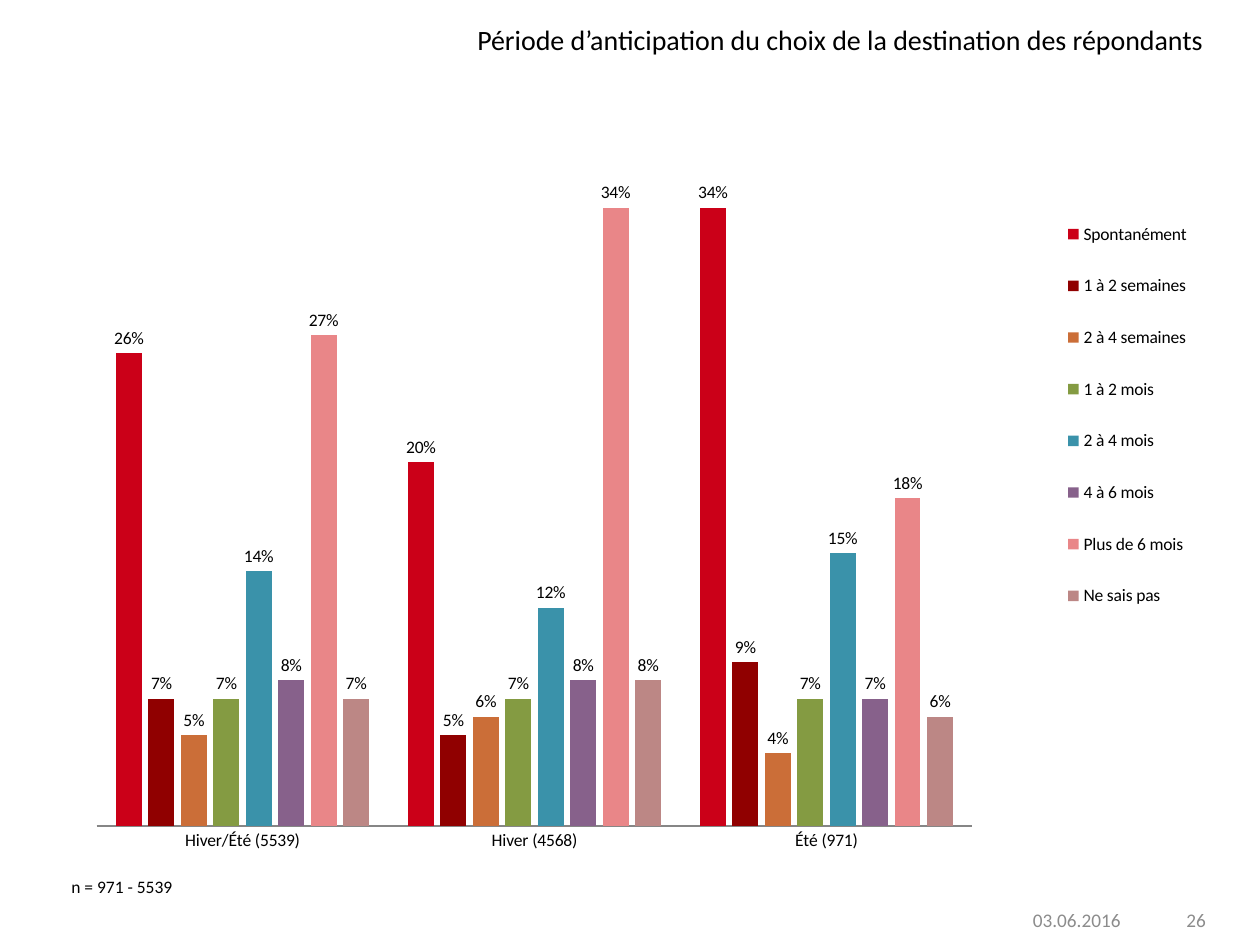
from dataclasses import dataclass

from lxml.etree import SubElement
from pptx import Presentation
from pptx.chart.chart import Chart
from pptx.chart.data import CategoryChartData
from pptx.dml.color import RGBColor
from pptx.enum.chart import XL_CHART_TYPE, XL_LABEL_POSITION, XL_LEGEND_POSITION, XL_TICK_MARK
from pptx.enum.text import MSO_ANCHOR, PP_ALIGN
from pptx.oxml.ns import qn
from pptx.slide import Slide
from pptx.util import Cm, Pt

FONT = "Calibri"
COLORS = {
    "text": "000000",
    "footer": "8C8C8C",
    "axis": "868686",
    "red": "CB0018",
    "dark red": "900000",
    "orange": "CB6E38",
    "green": "849B42",
    "blue": "3A92AA",
    "purple": "87618B",
    "pink": "E98688",
    "dusty rose": "BC8785",
}


@dataclass
class Label:
    text: str
    left: float
    top: float
    width: float
    height: float
    size: int
    color: str = "text"
    align: PP_ALIGN = PP_ALIGN.LEFT
    anchor: MSO_ANCHOR = MSO_ANCHOR.TOP


@dataclass
class Period:
    name: str
    shares: tuple[float, ...]
    color: str


LABELS = [
    Label("03.06.2016", 20.57, 18.03, 2.54, 1.02, 11, "footer", anchor=MSO_ANCHOR.MIDDLE),
    Label("26", 18.64, 18.03, 5.92, 1.02, 11, "footer", PP_ALIGN.RIGHT, MSO_ANCHOR.MIDDLE),
    Label("Période d’anticipation du choix de la destination des répondants",
          7.62, 0.33, 16.89, 0.94, 16, align=PP_ALIGN.RIGHT),
    Label("n = 971 - 5539", 1.19, 17.53, 3.53, 0.69, 10),
]

SEASONS = ["Hiver/Été (5539)", "Hiver (4568)", "Été (971)"]
PERIODS = [
    Period("Spontanément", (0.26, 0.20, 0.34), "red"),
    Period("1 à 2 semaines", (0.07, 0.05, 0.09), "dark red"),
    Period("2 à 4 semaines", (0.05, 0.06, 0.04), "orange"),
    Period("1 à 2 mois", (0.07, 0.07, 0.07), "green"),
    Period("2 à 4 mois", (0.14, 0.12, 0.15), "blue"),
    Period("4 à 6 mois", (0.08, 0.08, 0.07), "purple"),
    Period("Plus de 6 mois", (0.27, 0.34, 0.18), "pink"),
    Period("Ne sais pas", (0.07, 0.08, 0.06), "dusty rose"),
]


def rgb(name: str) -> RGBColor:
    return RGBColor.from_string(COLORS[name])


def add_label(page: Slide, label: Label) -> None:
    box = page.shapes.add_textbox(
        Cm(label.left), Cm(label.top), Cm(label.width), Cm(label.height))
    frame = box.text_frame
    frame.word_wrap = True
    frame.vertical_anchor = label.anchor
    paragraph = frame.paragraphs[0]
    paragraph.text = label.text
    paragraph.alignment = label.align
    paragraph.font.name = FONT
    paragraph.font.size = Pt(label.size)
    paragraph.font.color.rgb = rgb(label.color)


def place_part(chart: Chart, tag: str, index: int, inner: bool,
               bounds: tuple[float, float, float, float]) -> None:
    """Give a chart part a manual layout in fractions of the chart area."""
    part = chart.element.find(f".//{qn(tag)}")
    for old_layout in part.findall(qn("c:layout")):
        part.remove(old_layout)
    layout = SubElement(part, qn("c:layout"))
    part.insert(index, layout)
    manual = SubElement(layout, qn("c:manualLayout"))
    settings = [("layoutTarget", "inner")] if inner else []
    settings += [("xMode", "edge"), ("yMode", "edge")]
    settings += zip("xywh", map(str, bounds))
    for name, value in settings:
        SubElement(manual, qn(f"c:{name}")).set("val", value)


def add_period_chart(page: Slide) -> None:
    data = CategoryChartData(number_format="0%")
    data.categories = SEASONS
    for period in PERIODS:
        data.add_series(period.name, period.shares)
    chart = page.shapes.add_chart(
        XL_CHART_TYPE.COLUMN_CLUSTERED, Cm(1.19), Cm(1.47), Cm(23.67), Cm(16.05), data).chart
    chart.has_title = False
    chart.font.name = FONT
    chart.font.size = Pt(10)
    chart.font.color.rgb = rgb("text")

    seasons_axis = chart.category_axis
    seasons_axis.major_tick_mark = XL_TICK_MARK.NONE
    seasons_axis.format.line.color.rgb = rgb("axis")
    seasons_axis.format.line.width = Pt(0.75)
    shares_axis = chart.value_axis
    shares_axis.minimum_scale, shares_axis.maximum_scale = 0, 0.4
    shares_axis.has_major_gridlines = False
    shares_axis.visible = False

    plot = chart.plots[0]
    plot.gap_width, plot.overlap = 150, -25
    plot.vary_by_categories = False
    for series, period in zip(plot.series, PERIODS):
        series.format.fill.solid()
        series.format.fill.fore_color.rgb = rgb(period.color)
        labels = series.data_labels
        labels.show_value = True
        labels.number_format = "0%"
        labels.number_format_is_linked = False
        labels.position = XL_LABEL_POSITION.OUTSIDE_END

    chart.has_legend = True
    chart.legend.position = XL_LEGEND_POSITION.RIGHT
    chart.legend.include_in_layout = False
    place_part(chart, "c:plotArea", 0, True, (0.032, 0.032, 0.746, 0.914))
    place_part(chart, "c:legend", 1, False, (0.84, 0.15, 0.14, 0.56))


def main() -> None:
    deck = Presentation()
    deck.slide_width, deck.slide_height = Cm(25.4), Cm(19.05)
    page = deck.slides.add_slide(deck.slide_layouts[6])
    for label in LABELS:
        add_label(page, label)
    add_period_chart(page)
    deck.save("out.pptx")


if __name__ == "__main__":
    main()
